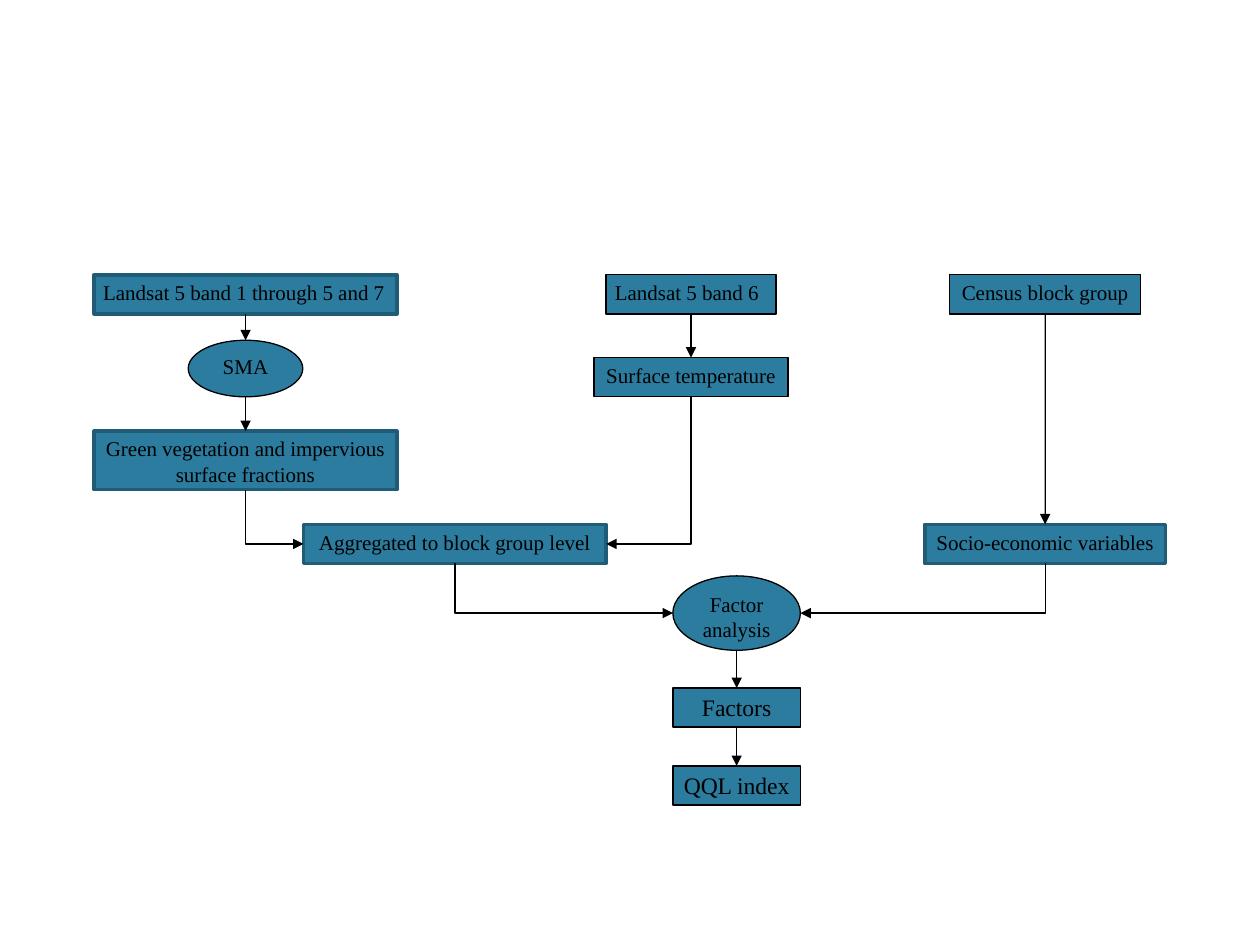
from lxml import etree
from pptx import Presentation
from pptx.dml.color import RGBColor
from pptx.enum.shapes import MSO_CONNECTOR as CONN, MSO_SHAPE as SHAPE
from pptx.enum.text import MSO_ANCHOR as ANCHOR, PP_ALIGN as ALIGN
from pptx.oxml.ns import qn
from pptx.util import Cm, Pt

BOTTOM, TOP = 2, 0


def rgb(value):
    return RGBColor.from_string(value)


class FlowChart:
    FILL, INK, EDGE = "2C7C9F", "000000", "215C76"
    FONT = "Times New Roman"
    THIN, THICK = 0.75, 2
    INSETS = {"margin_left": Cm(0.18), "margin_right": Cm(0.18),
              "margin_top": Cm(0.1), "margin_bottom": Cm(0.1),
              "word_wrap": True, "vertical_anchor": ANCHOR.TOP}

    def __init__(self, slide):
        self.s = slide

    def node(self, text, center, top, width, height=0.79, kind=SHAPE.RECTANGLE,
             thick=False, size=12, align=ALIGN.CENTER):
        """Add a labelled shape placed by its centre line and top, in cm."""
        sp = self.s.shapes.add_shape(kind, Cm(center - width / 2), Cm(top),
                                     Cm(width), Cm(height))
        sp.shadow.inherit = False
        sp.fill.solid()
        sp.fill.fore_color.rgb = rgb(self.FILL)
        sp.line.color.rgb = rgb(self.EDGE if thick else self.INK)
        sp.line.width = Pt(self.THICK if thick else self.THIN)
        tf = sp.text_frame
        for name, value in self.INSETS.items():
            setattr(tf, name, value)
        p = tf.paragraphs[0]
        p.alignment = align
        r = p.add_run()
        r.text = text
        for name, value in {"name": self.FONT, "size": Pt(size)}.items():
            setattr(r.font, name, value)
        r.font.color.rgb = rgb(self.INK)
        return sp

    def line(self, x1, y1, x2, y2):
        """Add a thin straight connector with an arrowhead at its end."""
        c = self.s.shapes.add_connector(CONN.STRAIGHT, x1, y1, x2, y2)
        c.line.color.rgb = rgb(self.INK)
        c.line.width = Pt(self.THIN)
        tail = etree.SubElement(c.line._get_or_add_ln(), qn("a:tailEnd"))
        tail.set("type", "triangle")
        etree.SubElement(c._element.spPr, qn("a:effectLst"))
        return c

    def down(self, upper, lower):
        """Point from the bottom of one shape to the top of the next."""
        x = upper.left + upper.width // 2
        c = self.line(x, upper.top + upper.height, x, lower.top)
        # Site 2 of an ellipse is not its bottom, so only rectangles are joined.
        if upper.auto_shape_type == SHAPE.RECTANGLE:
            c.begin_connect(upper, BOTTOM)
        c.end_connect(lower, TOP)

    def elbow(self, upper, target):
        """Go down from one shape, then sideways into the near side of another."""
        x1, y1 = upper.left + upper.width // 2, upper.top + upper.height
        y2 = target.top + target.height // 2
        rightward = x1 < target.left
        x2 = target.left if rightward else target.left + target.width
        across, drop = abs(x2 - x1), y2 - y1
        c = self.line(0, 0, drop, across)
        c._element.spPr.find(qn("a:prstGeom")).set("prst", "bentConnector2")
        # The preset runs sideways first: a quarter turn swaps its two sides.
        c.left = (x1 + x2 - drop) // 2
        c.top = (y1 + y2 - across) // 2
        xfrm = c._element.spPr.find(qn("a:xfrm"))
        xfrm.set("rot", str((270 if rightward else 90) * 60000))
        if rightward:
            xfrm.set("flipH", "1")


def main():
    prs = Presentation()
    prs.slide_width, prs.slide_height = Cm(25.4), Cm(19.05)
    chart = FlowChart(prs.slides.add_slide(prs.slide_layouts[6]))
    node = chart.node

    # Centre lines of the columns and tops of the shared rows, in cm
    fractions_x, level_x, temperature_x, result_x, census_x = 4.95, 9.17, 13.93, 14.85, 21.07
    source_y, variable_y = 5.54, 10.57

    bands = node("Landsat 5 band 1 through 5 and 7", fractions_x, source_y, 6.1,
                 thick=True, align=ALIGN.LEFT)
    sma = node("SMA", fractions_x, 6.86, 2.31, 1.14, SHAPE.OVAL)
    fractions = node("Green vegetation and impervious surface fractions",
                     fractions_x, 8.69, 6.1, 1.18, thick=True)
    thermal = node("Landsat 5 band 6", temperature_x, source_y, 3.43, align=ALIGN.LEFT)
    temperature = node("Surface temperature", temperature_x, 7.21, 3.91)
    census = node("Census block group", census_x, source_y, 3.86)
    variables = node("Socio-economic variables", census_x, variable_y, 4.85, thick=True)
    level = node("Aggregated to block group level", level_x, variable_y, 6.1, thick=True)
    analysis = node("Factor analysis", result_x, 11.61, 2.57, 1.5, SHAPE.OVAL)
    factors = node("Factors", result_x, 13.87, 2.57, size=13.5)
    index = node("QQL index", result_x, 15.44, 2.57, size=13.5)

    for chain in ((bands, sma, fractions), (thermal, temperature),
                  (census, variables), (analysis, factors, index)):
        for upper, lower in zip(chain, chain[1:]):
            chart.down(upper, lower)
    for upper, target in ((fractions, level), (temperature, level),
                          (level, analysis), (variables, analysis)):
        chart.elbow(upper, target)

    prs.save("out.pptx")


if __name__ == "__main__":
    main()
